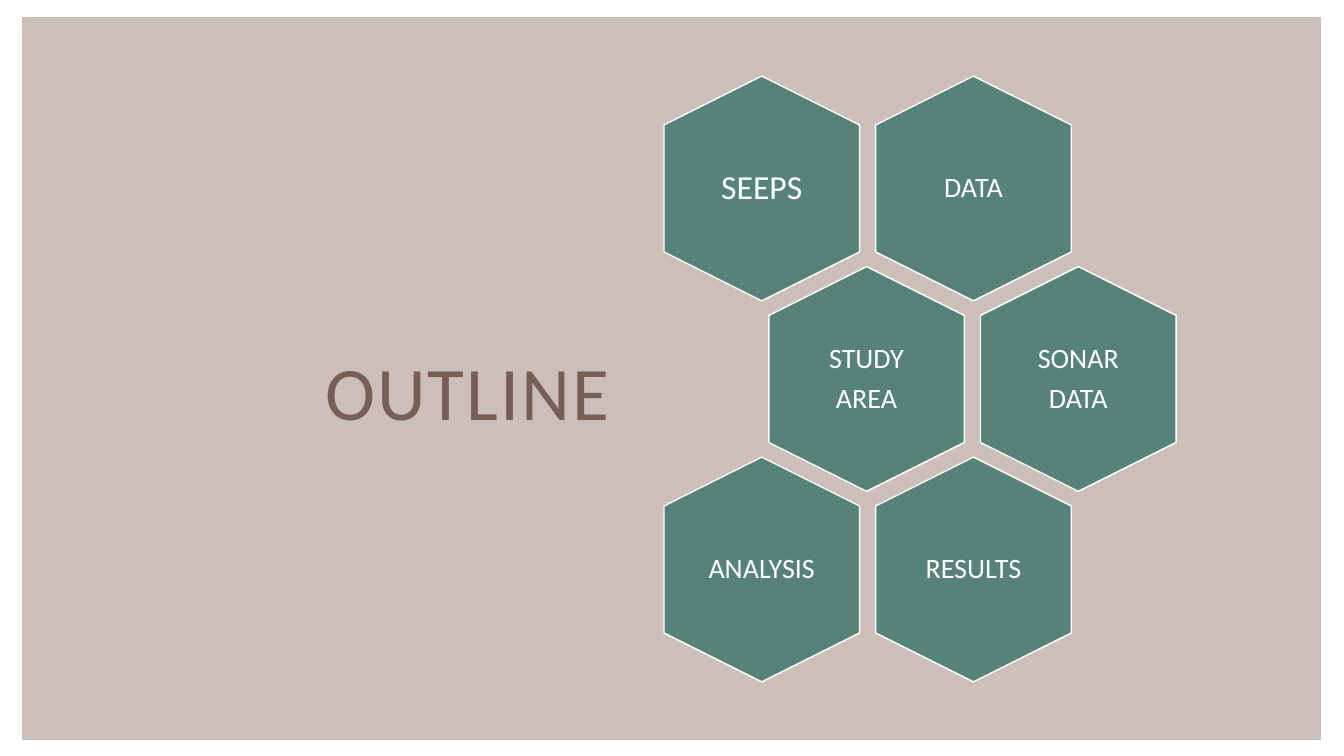
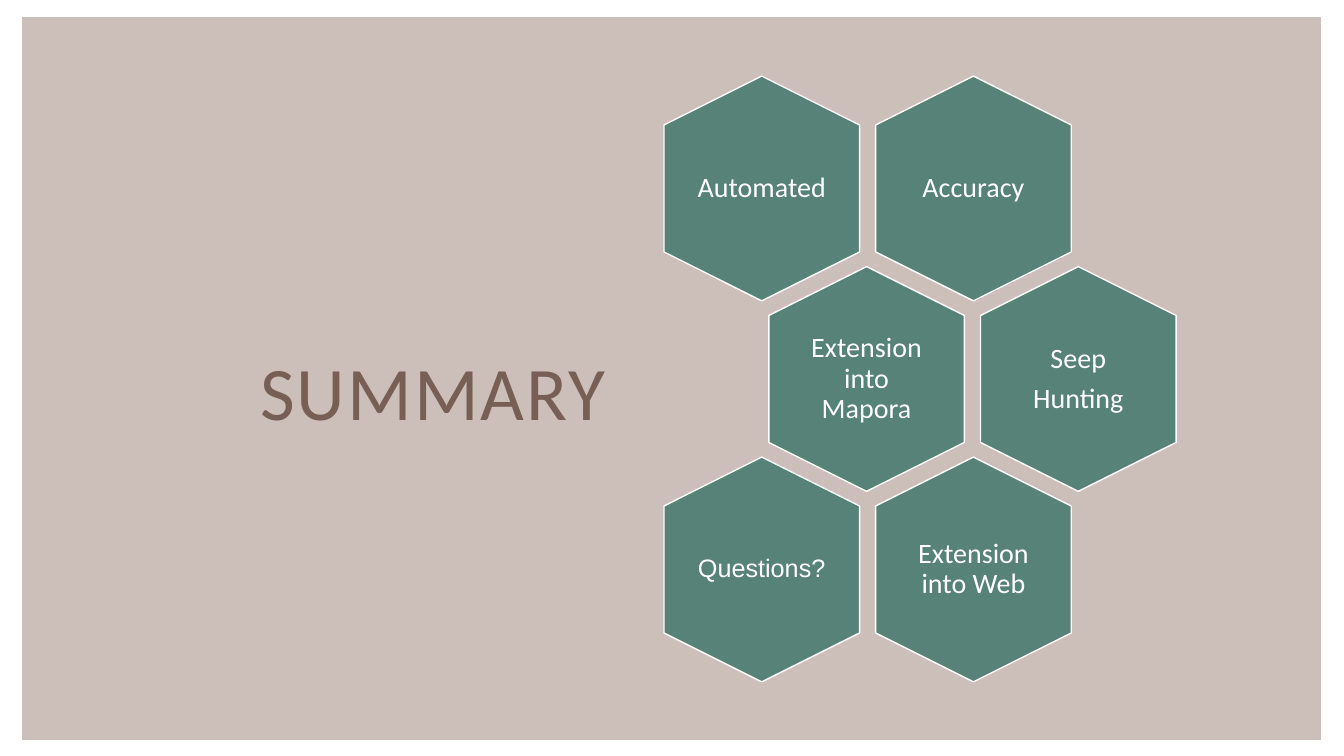
import pptx
import pptx.util
import pptx.dml.color
import pptx.enum.shapes
import pptx.enum.text

Inches = pptx.util.Inches
Pt = pptx.util.Pt
SHAPE = pptx.enum.shapes.MSO_SHAPE
ALIGN = pptx.enum.text.PP_ALIGN
ANCHOR = pptx.enum.text.MSO_ANCHOR


def rgb(value):
    return pptx.dml.color.RGBColor.from_string(value)


class Deck:
    """Shared style and the slide being built."""
    PANEL, HEXAGON, WHITE, TITLE = "CCBEB8", "568278", "FFFFFF", "775F55"
    FONT, SIZE = "Calibri", 20
    HEX_LONG, HEX_SHORT = 2.23, 1.94      # before the quarter turn
    LABEL_W, LABEL_H = 1.33, 1.53
    LEFT, TOP = 7.555, 1.87               # centre of the first hexagon
    STEP_X, STEP_Y, SHIFT = 2.1, 1.89, 1.04

    def __init__(self):
        self.prs = pptx.Presentation()
        self.prs.slide_width = Inches(13.33)
        self.prs.slide_height = Inches(7.5)
        self.s = None

    def shape(self, kind, x, y, w, h, fill, line=None):
        sp = self.s.shapes.add_shape(kind, Inches(x), Inches(y), Inches(w), Inches(h))
        sp.shadow.inherit = False
        sp.fill.solid()
        sp.fill.fore_color.rgb = rgb(fill)
        if line:
            sp.line.color.rgb = rgb(line)
            sp.line.width = Pt(1)
        else:
            sp.line.fill.background()
        return sp

    def format_runs(self, p, size, font, color):
        p.alignment = ALIGN.CENTER
        for r in p.runs:
            r.font.size = Pt(size)
            r.font.name = font
            r.font.color.rgb = rgb(color)

    def slide(self, title, x, w):
        self.s = self.prs.slides.add_slide(self.prs.slide_layouts[5])
        # Background panel, behind the title
        panel = self.shape(SHAPE.RECTANGLE, 0.22, 0.17, 12.88, 7.17, self.PANEL)
        sp = self.s.shapes.title
        sp.element.addprevious(panel.element)
        # Title
        sp.left, sp.top = Inches(x), Inches(3.34)
        sp.width, sp.height = Inches(w), Inches(1.07)
        tf = sp.text_frame
        tf.text = title
        tf.word_wrap = True
        tf.vertical_anchor = ANCHOR.MIDDLE
        tf.margin_left = Inches(0.15)
        p = tf.paragraphs[0]
        self.format_runs(p, 54, self.FONT, self.TITLE)
        for r in p.runs:
            r.font.element.set("spc", "150") if hasattr(r.font, "element") else \
                r.font._element.set("spc", "150")

    def hexagon(self, cx, cy, text, size=SIZE, font=FONT):
        w, h = self.HEX_LONG, self.HEX_SHORT
        sp = self.shape(SHAPE.HEXAGON, cx - w / 2, cy - h / 2, w, h,
                        self.HEXAGON, self.WHITE)
        sp.adjustments[0] = 0.25
        sp.rotation = 90
        # Upright label over the turned hexagon
        w, h = self.LABEL_W, self.LABEL_H
        label = self.s.shapes.add_textbox(Inches(cx - w / 2), Inches(cy - h / 2),
                                          Inches(w), Inches(h))
        tf = label.text_frame
        tf.text = text
        tf.word_wrap = True
        tf.vertical_anchor = ANCHOR.MIDDLE
        tf.margin_left = tf.margin_right = tf.margin_top = tf.margin_bottom = 0
        for p in tf.paragraphs:
            p.line_spacing = 0.9
            p.space_after = Pt(7)
            self.format_runs(p, size, font, self.WHITE)

    def honeycomb(self, rows):
        for i, row in enumerate(rows):
            for j, item in enumerate(row):
                cx = self.LEFT + j * self.STEP_X + i % 2 * self.SHIFT
                self.hexagon(cx, self.TOP + i * self.STEP_Y, *item)


def main():
    deck = Deck()

    # Outline
    deck.slide("OUTLINE", 2.54, 4.14)
    deck.honeycomb([
        [("SEEPS", 24), ("DATA",)],
        [("STUDY\nAREA",), ("SONAR\nDATA",)],
        [("ANALYSIS",), ("RESULTS",)],
    ])

    # Summary
    deck.slide("SUMMARY", 1.86, 4.82)
    deck.honeycomb([
        [("Automated",), ("Accuracy",)],
        [("Extension into Mapora",), ("Seep\nHunting",)],
        [("Questions?", 18, "Arial"), ("Extension into Web",)],
    ])

    deck.prs.save("out.pptx")


if __name__ == "__main__":
    main()
